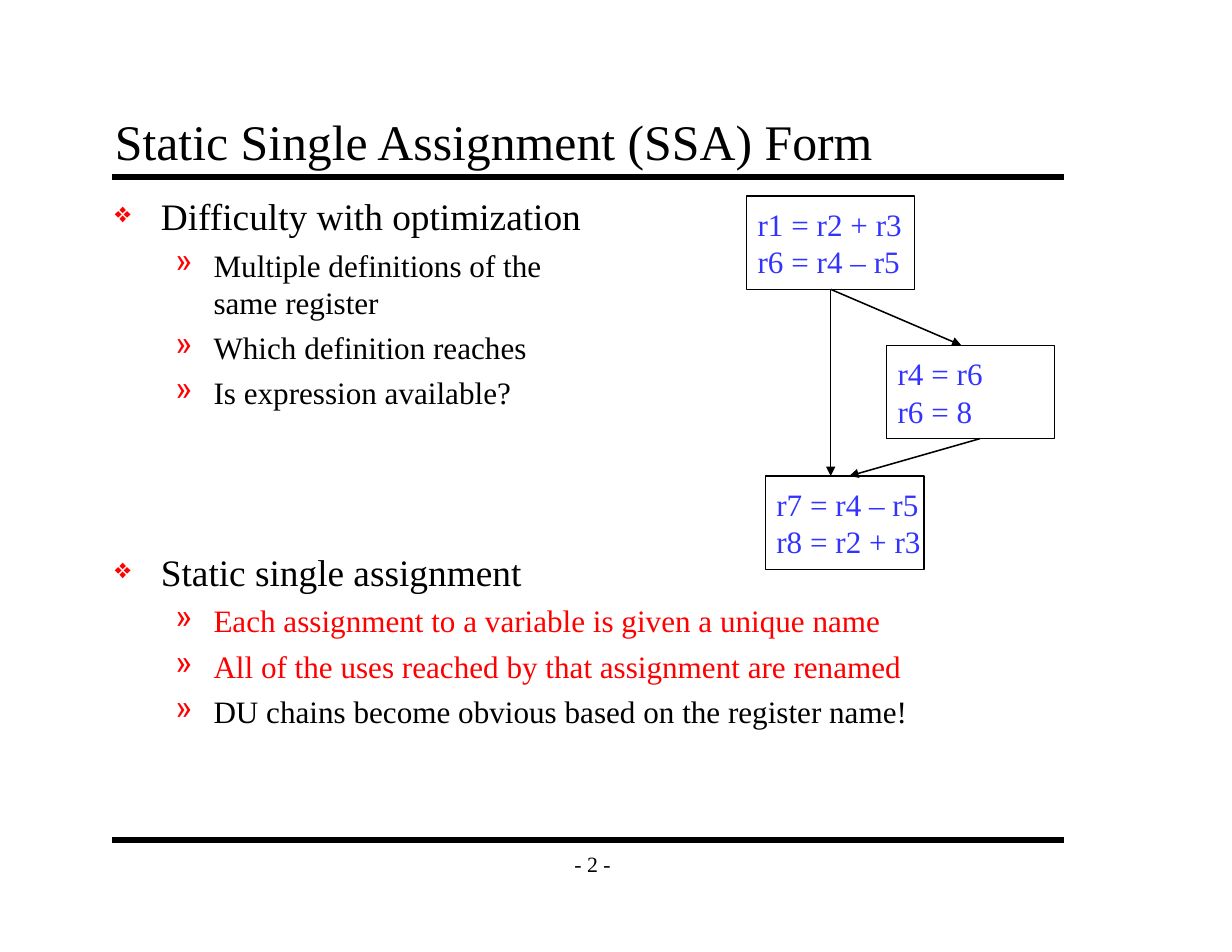
from dataclasses import dataclass

from lxml import etree
from pptx import Presentation
from pptx.dml.color import RGBColor
from pptx.enum import shapes, text
from pptx.oxml.ns import qn
from pptx.util import Emu, Inches, Pt

COLUMNS, ROWS = 132, 102
FONT = "Times New Roman"
BLACK, RED, BLUE = "000000", "FF0000", "3333FF"


@dataclass(frozen=True)
class Area:
    left: float
    top: float
    width: float
    height: float


@dataclass(frozen=True)
class Block:
    area: Area
    code: tuple[str, str]


@dataclass(frozen=True)
class Line:
    start: tuple[float, float]
    end: tuple[float, float]
    weight: float = 1
    arrow: bool = True


@dataclass(frozen=True)
class Level:
    bullet: str
    scale: int
    size: int
    left: float
    hanging: float


@dataclass(frozen=True)
class Point:
    words: str
    level: Level
    color: str = BLACK
    before: float = 5


TOPIC = Level("❖", 75, 24, 0.41, 0.41)
DETAIL = Level("»", 100, 20, 0.88, 0.34)

POINTS = (
    Point("Difficulty with optimization", TOPIC),
    Point("Multiple definitions of the\nsame register", DETAIL),
    Point("Which definition reaches", DETAIL),
    Point("Is expression available?", DETAIL),
    Point("Static single assignment", TOPIC, before=89),
    Point("Each assignment to a variable is given a unique name", DETAIL, RED),
    Point("All of the uses reached by that assignment are renamed", DETAIL, RED),
    Point("DU chains become obvious based on the register name!", DETAIL),
)
BLOCKS = (
    Block(Area(80, 21, 18, 10), ("r1 = r2 + r3", "r6 = r4 – r5")),
    Block(Area(95, 37, 18, 10), ("r4 = r6", "r6 = 8")),
    Block(Area(82, 51, 17, 10), ("r7 = r4 – r5", "r8 = r2 + r3")),
)
RULES = tuple(Line((12, row), (114, row), 4, False) for row in (19, 90))
BRANCHES = (Line((89, 31), (103, 37)), Line((89, 31), (89, 51)))
JOIN = Line((105, 47), (91, 51))


def rgb(value: str) -> RGBColor:
    """Turn a hex string into a colour."""
    return RGBColor.from_string(value)


def place(deck, *cells: float) -> list[Emu]:
    """Turn alternating columns and rows into slide lengths."""
    sides = (deck.slide_width / COLUMNS, deck.slide_height / ROWS)
    return [Emu(round(cell * sides[i % 2])) for i, cell in enumerate(cells)]


def area_of(deck, area: Area) -> list[Emu]:
    """Give the slide lengths of an area."""
    return place(deck, area.left, area.top, area.width, area.height)


def write(paragraph, words: str, size: float, color: str) -> None:
    """Fill a paragraph with text in one style."""
    paragraph.text = words
    for run in paragraph.runs:
        for name, value in {"name": FONT, "size": Pt(size)}.items():
            setattr(run.font, name, value)
        run.font.color.rgb = rgb(color)


def add_frame(deck, slide, area: Area, anchor, wrap: bool = True):
    """Add a text box and return its text frame."""
    frame = slide.shapes.add_textbox(*area_of(deck, area)).text_frame
    settings = {
        "word_wrap": wrap,
        "vertical_anchor": anchor,
        "margin_left": Inches(0.11),
        "margin_right": Inches(0.11),
        "margin_top": Inches(0.06),
        "margin_bottom": Inches(0.06),
    }
    for name, value in settings.items():
        setattr(frame, name, value)
    return frame


def add_line(deck, slide, line: Line):
    """Draw a straight line, with an arrowhead if wanted."""
    connector = slide.shapes.add_connector(
        shapes.MSO_CONNECTOR.STRAIGHT, *place(deck, *line.start, *line.end)
    )
    connector.line.color.rgb = rgb(BLACK)
    connector.line.width = Pt(line.weight)
    if line.arrow:
        outline = connector.line._get_or_add_ln()
        etree.SubElement(outline, qn("a:tailEnd"), type="triangle")
    etree.SubElement(connector._element.spPr, qn("a:effectLst"))
    return connector


def add_block(deck, slide, block: Block):
    """Draw a basic block with its code."""
    box = slide.shapes.add_shape(
        shapes.MSO_SHAPE.RECTANGLE, *area_of(deck, block.area)
    )
    box.shadow.inherit = False
    box.fill.background()
    box.line.color.rgb = rgb(BLACK)
    box.line.width = Pt(1)
    frame = box.text_frame
    frame.word_wrap = False
    frame.vertical_anchor = text.MSO_ANCHOR.MIDDLE
    for i, words in enumerate(block.code):
        paragraph = frame.add_paragraph() if i else frame.paragraphs[0]
        paragraph.alignment = text.PP_ALIGN.LEFT
        write(paragraph, words, 20, BLUE)
    return box


def write_point(paragraph, point: Point) -> None:
    """Write one bulleted point."""
    level = point.level
    write(paragraph, point.words, level.size, point.color)
    paragraph.level = int(level is DETAIL)
    paragraph.space_before = Pt(point.before)
    properties = paragraph._p.get_or_add_pPr()
    properties.set("marL", str(Inches(level.left)))
    properties.set("indent", str(-Inches(level.hanging)))
    tint = etree.SubElement(properties, qn("a:buClr"))
    etree.SubElement(tint, qn("a:srgbClr"), val=RED)
    etree.SubElement(properties, qn("a:buSzPct"), val=str(level.scale * 1000))
    etree.SubElement(properties, qn("a:buChar"), char=level.bullet)


def main() -> None:
    """Build the slide and save it."""
    deck = Presentation()
    deck.slide_width, deck.slide_height = Inches(11), Inches(8.5)
    slide = deck.slides.add_slide(deck.slide_layouts[6])
    anchors = text.MSO_ANCHOR

    for rule in RULES:
        add_line(deck, slide, rule)
    number = add_frame(deck, slide, Area(59, 90, 9, 5), anchors.MIDDLE, False)
    write(number.paragraphs[0], "- 2 -", 14, BLACK)
    number.paragraphs[0].alignment = text.PP_ALIGN.CENTER
    title = add_frame(deck, slide, Area(11, 11, 102, 8), anchors.BOTTOM)
    write(title.paragraphs[0], "Static Single Assignment (SSA) Form", 32, BLACK)

    body = add_frame(deck, slide, Area(11, 20, 106, 68.4), anchors.TOP)
    for i, point in enumerate(POINTS):
        write_point(body.add_paragraph() if i else body.paragraphs[0], point)

    entry, *_ = [add_block(deck, slide, block) for block in BLOCKS]
    for branch in BRANCHES:
        add_line(deck, slide, branch).begin_connect(entry, 2)
    add_line(deck, slide, JOIN)
    deck.save("out.pptx")


if __name__ == "__main__":
    main()
